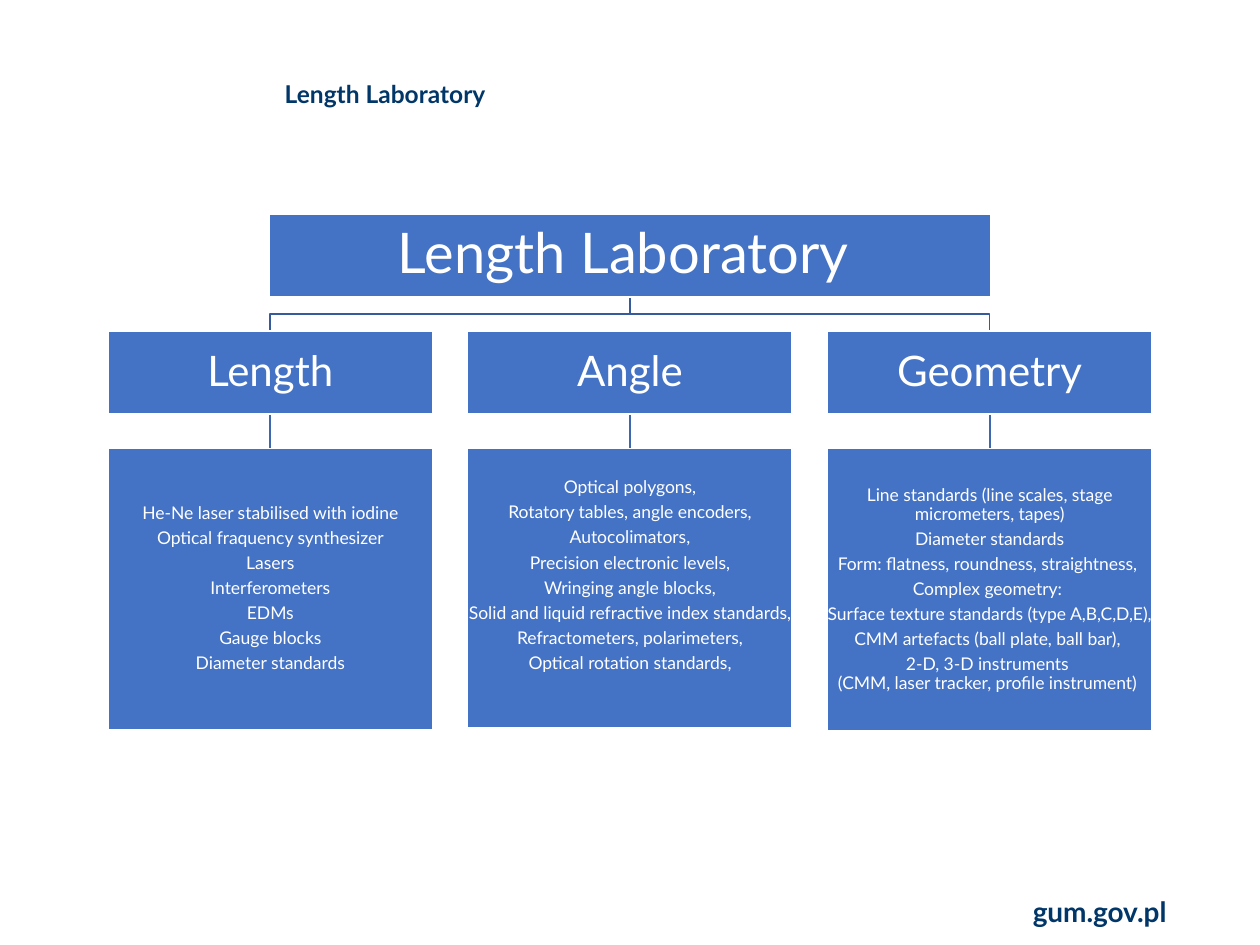
import pptx
import pptx.dml.color
import pptx.enum.shapes
import pptx.enum.text
import pptx.oxml.ns
import pptx.util
import lxml.etree
from dataclasses import dataclass

Cm = pptx.util.Cm
Pt = pptx.util.Pt


def paint(code):
    return pptx.dml.color.RGBColor.from_string(code)


@dataclass(frozen=True)
class Theme:
    face: str = "Lato"
    navy: str = "003668"
    blue: str = "4472C4"
    white: str = "FFFFFF"
    fork: str = "365B9D"
    stem: str = "3E67B2"
    head: int = 14
    site: int = 16
    root: int = 32
    group: int = 24
    body: int = 10
    thin: int = 1


class Chart:
    def __init__(self, slide, theme):
        self.shapes = slide.shapes
        self.theme = theme

    def style(self, para, size, color, bold=False):
        para.font.name = self.theme.face
        para.font.size = Pt(size)
        para.font.bold = bold
        para.font.color.rgb = paint(color)

    def label(self, text, x, y, w, h, size):
        frame = self.shapes.add_textbox(Cm(x), Cm(y), Cm(w), Cm(h)).text_frame
        frame.word_wrap = True
        frame.text = text
        self.style(frame.paragraphs[0], size, self.theme.navy, True)

    def box(self, lines, x, y, w, h, size, inset=0.05, lift=0):
        rect = self.shapes.add_shape(
            pptx.enum.shapes.MSO_SHAPE.RECTANGLE, Cm(x), Cm(y), Cm(w), Cm(h))
        rect.shadow.inherit = False
        rect.fill.solid()
        rect.fill.fore_color.rgb = paint(self.theme.blue)
        rect.line.color.rgb = paint(self.theme.white)
        rect.line.width = Pt(self.theme.thin)
        frame = rect.text_frame
        frame.word_wrap = True
        frame.vertical_anchor = pptx.enum.text.MSO_ANCHOR.MIDDLE
        frame.margin_left = frame.margin_right = frame.margin_top = Cm(inset)
        frame.margin_bottom = Cm(inset + lift)
        for i, line in enumerate(lines):
            para = frame.add_paragraph() if i else frame.paragraphs[0]
            para.text = line
            para.alignment = pptx.enum.text.PP_ALIGN.CENTER
            para.line_spacing = 0.9
            para.space_after = Pt(size * 0.35)
            self.style(para, size, self.theme.white)
        return rect

    def stem(self, x, top, end):
        link = self.shapes.add_connector(
            pptx.enum.shapes.MSO_CONNECTOR.STRAIGHT, Cm(x), Cm(top), Cm(x), Cm(end))
        link.line.color.rgb = paint(self.theme.stem)
        link.line.width = Pt(self.theme.thin)
        props = link._element.spPr
        lxml.etree.SubElement(props, pptx.oxml.ns.qn("a:effectLst"))
        return link

    def fork(self, start, x, top, end):
        mid = (top + end) / 2
        path = self.shapes.build_freeform(Cm(start), Cm(top))
        path.add_line_segments(
            [(Cm(start), Cm(mid)), (Cm(x), Cm(mid)), (Cm(x), Cm(end))], close=False)
        bend = path.convert_to_shape()
        bend.shadow.inherit = False
        bend.fill.background()
        bend.line.color.rgb = paint(self.theme.fork)
        bend.line.width = Pt(self.theme.thin)


GROUPS = [
    ("Length", 5.67, 0, [
        "He-Ne laser stabilised with iodine",
        "Optical fraquency synthesizer",
        "Lasers",
        "Interferometers",
        "EDMs",
        "Gauge blocks",
        "Diameter standards",
    ]),
    ("Angle", 5.64, 0.5, [
        "Optical polygons,",
        "Rotatory tables, angle encoders,",
        "Autocolimators,",
        "Precision electronic levels,",
        "Wringing angle blocks,",
        "Solid and liquid refractive index standards,",
        "Refractometers, polarimeters,",
        "Optical rotation standards,",
    ]),
    ("Geometry", 5.69, 0, [
        "Line standards (line scales, stage micrometers, tapes)",
        "Diameter standards",
        "Form: flatness, roundness, straightness, ",
        "Complex geometry: ",
        "Surface texture standards (type A,B,C,D,E), ",
        "CMM artefacts (ball plate, ball bar), ",
        "2-D, 3-D instruments \v(CMM, laser tracker, profile instrument) ",
    ]),
]


def main():
    deck = pptx.Presentation()
    deck.slide_width, deck.slide_height = Cm(25.4), Cm(19.05)
    theme = Theme()
    chart = Chart(deck.slides.add_slide(deck.slide_layouts[6]), theme)

    center, step, wide, tall = 12.7, 7.25, 6.55, 1.67
    top, row, gap = 4.32, 2.36, 0.69
    upper, lower = top + row, top + 2 * row
    mids = [center + step * (i - 1) for i in range(3)]

    chart.label("Length Laboratory", 5.49, 1.47, 13.34, 0.86, theme.head)
    chart.label("gum.gov.pl", 20.57, 17.91, 4.55, 0.94, theme.site)

    for x in (mids[0], mids[2]):
        chart.fork(center, x, upper - gap, upper)
    stems = [chart.stem(x, lower - gap, lower) for x in mids]

    chart.box(["Length Laboratory "], center - 7.28, top, 14.56, tall, theme.root)
    for x, stem, (name, high, lift, lines) in zip(mids, stems, GROUPS):
        left = x - wide / 2
        group = chart.box([name], left, upper, wide, tall, theme.group)
        body = chart.box(lines, left, lower, wide, high, theme.body, 0.01, lift)
        stem.begin_connect(group, 2)
        stem.end_connect(body, 0)

    deck.save("out.pptx")


if __name__ == "__main__":
    main()
